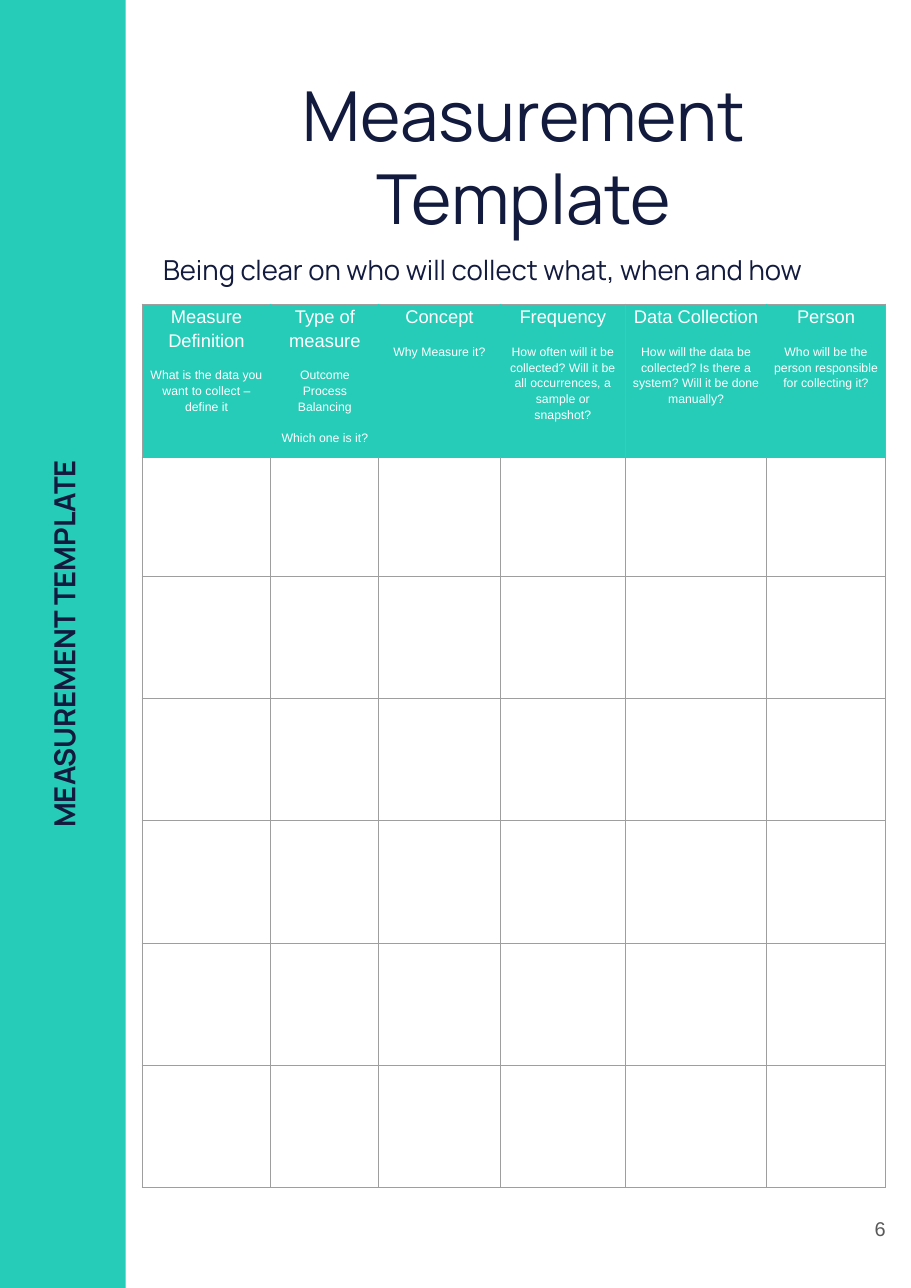
from lxml import etree
from pptx import Presentation
from pptx.dml.color import RGBColor
from pptx.enum.shapes import MSO_SHAPE
from pptx.enum.text import MSO_ANCHOR, PP_ALIGN
from pptx.oxml.ns import qn
from pptx.util import Inches, Pt

TEAL = RGBColor(0x26, 0xCC, 0xB8)
NAVY = RGBColor(0x12, 0x1A, 0x3D)
WHITE = RGBColor(0xFF, 0xFF, 0xFF)
BORDER_GRAY = RGBColor(0x9E, 0x9E, 0x9E)
NUMBER_GRAY = RGBColor(0x59, 0x59, 0x59)

COLUMN_WIDTHS = [1.17, 0.98, 1.1, 1.14, 1.28, 1.08]
ROW_HEIGHTS = [1.39, 1.08] + [1.11] * 5
HEADINGS = [
    ("Measure Definition", "What is the data you want to collect – define it"),
    ("Type of measure", "Outcome Process Balancing", "Which one is it?"),
    ("Concept", "Why Measure it?"),
    ("Frequency", "How often will it be collected? Will it be all occurrences, a sample or snapshot?"),
    ("Data Collection", "How will the data be collected? Is there a system? Will it be done manually?"),
    ("Person", "Who will be the person responsible for collecting it?"),
]
DIVIDED_AFTER = 3  # the one heading with a visible divider on its right


def format_paragraph(paragraph, font_name, size, color, alignment, bold=False):
    paragraph.alignment = alignment
    for run in paragraph.runs:
        run.font.name = font_name
        run.font.size = Pt(size)
        run.font.color.rgb = color
        run.font.bold = bold


def fill_text(shape, text, font_name, size, color, alignment,
              bold=False, margin=0.1, anchor=MSO_ANCHOR.TOP):
    frame = shape.text_frame
    frame.text = text
    frame.word_wrap = True
    frame.vertical_anchor = anchor
    frame.margin_left = frame.margin_right = Inches(margin)
    frame.margin_top = frame.margin_bottom = Inches(margin)
    paragraph = frame.paragraphs[0]
    paragraph.space_before = Pt(0)
    paragraph.line_spacing = 1.0
    format_paragraph(paragraph, font_name, size, color, alignment, bold)


def place(shape, left, top, width, height):
    shape.left, shape.top = Inches(left), Inches(top)
    shape.width, shape.height = Inches(width), Inches(height)


def set_border(cell, edge, color):
    properties = cell._tc.get_or_add_tcPr()
    line = etree.SubElement(properties, qn(f"a:{edge}"), w=str(Pt(0.75)))
    fill = etree.SubElement(line, qn("a:solidFill"))
    etree.SubElement(fill, qn("a:srgbClr"), val=str(color))


def add_sidebar(slide, left, top, width, height):
    band = slide.shapes.add_shape(
        MSO_SHAPE.RECTANGLE, Inches(left), Inches(top), Inches(width), Inches(height))
    band.shadow.inherit = False
    band.fill.solid()
    band.fill.fore_color.rgb = TEAL
    band.line.fill.background()

    # Label turned to read upwards along the band
    length, thickness = 10.54, 0.52
    label = slide.shapes.add_textbox(
        Inches(left + width / 2 + 0.03 - length / 2),
        Inches(top + height / 2 - thickness / 2),
        Inches(length), Inches(thickness))
    label.rotation = 270
    fill_text(label, "MEASUREMENT TEMPLATE", "Manrope", 19, NAVY, PP_ALIGN.CENTER, bold=True)


def add_heading(slide, left, top, width, height):
    title = slide.shapes.title
    place(title, left, top, width, height - 0.57)
    fill_text(title, "Measurement Template", "Manrope", 45, NAVY, PP_ALIGN.CENTER)

    subtitle = slide.placeholders[1]
    place(subtitle, left, top + height - 0.57, width, 0.55)
    fill_text(subtitle, "Being clear on who will collect what, when and how",
              "Manrope", 18, NAVY, PP_ALIGN.LEFT)


def add_measurement_table(slide, left, top):
    frame = slide.shapes.add_table(
        len(ROW_HEIGHTS), len(COLUMN_WIDTHS), Inches(left), Inches(top),
        Inches(sum(COLUMN_WIDTHS)), Inches(sum(ROW_HEIGHTS)))
    table = frame.table
    for column, width in zip(table.columns, COLUMN_WIDTHS):
        column.width = Inches(width)
    last = len(COLUMN_WIDTHS) - 1

    for row_index, height in enumerate(ROW_HEIGHTS):
        table.rows[row_index].height = Inches(height)
        is_header = row_index == 0
        for column_index in range(last + 1):
            cell = table.cell(row_index, column_index)
            # Header dividers blend into the fill
            gray_left = not is_header or column_index in (0, DIVIDED_AFTER + 1)
            gray_right = not is_header or column_index in (DIVIDED_AFTER, last)
            set_border(cell, "lnL", BORDER_GRAY if gray_left else TEAL)
            set_border(cell, "lnR", BORDER_GRAY if gray_right else TEAL)
            set_border(cell, "lnT", TEAL if row_index == 1 else BORDER_GRAY)
            set_border(cell, "lnB", TEAL if is_header else BORDER_GRAY)
            cell.fill.solid()
            cell.fill.fore_color.rgb = TEAL if is_header else WHITE

    # Header wording
    for column_index, lines in enumerate(HEADINGS):
        cell = table.cell(0, column_index)
        cell.margin_left = cell.margin_right = Inches(0.06)
        cell.margin_top = cell.margin_bottom = 0
        cell.text_frame.text = "\n".join(lines)
        for index, paragraph in enumerate(cell.text_frame.paragraphs):
            paragraph.line_spacing = 1.15
            paragraph.space_after = Pt(10)
            format_paragraph(paragraph, "Arial", 8 if index else 12, WHITE, PP_ALIGN.CENTER)


def add_page_number(slide, left, top, width, height):
    number = slide.shapes.add_textbox(
        Inches(left), Inches(top), Inches(width), Inches(height))
    fill_text(number, "6", "Arial", 13, NUMBER_GRAY, PP_ALIGN.RIGHT,
              margin=0.13, anchor=MSO_ANCHOR.MIDDLE)


def main():
    presentation = Presentation()
    presentation.slide_width = Inches(8.27)
    presentation.slide_height = Inches(11.69)
    slide = presentation.slides.add_slide(presentation.slide_layouts[0])
    add_sidebar(slide, -0.04, 0, 1.18, 11.69)
    add_heading(slide, 1.38, 0.56, 6.75, 2.21)
    add_measurement_table(slide, 1.29, 2.76)
    add_page_number(slide, 7.67, 10.71, 0.5, 0.89)
    presentation.save("out.pptx")


if __name__ == "__main__":
    main()
